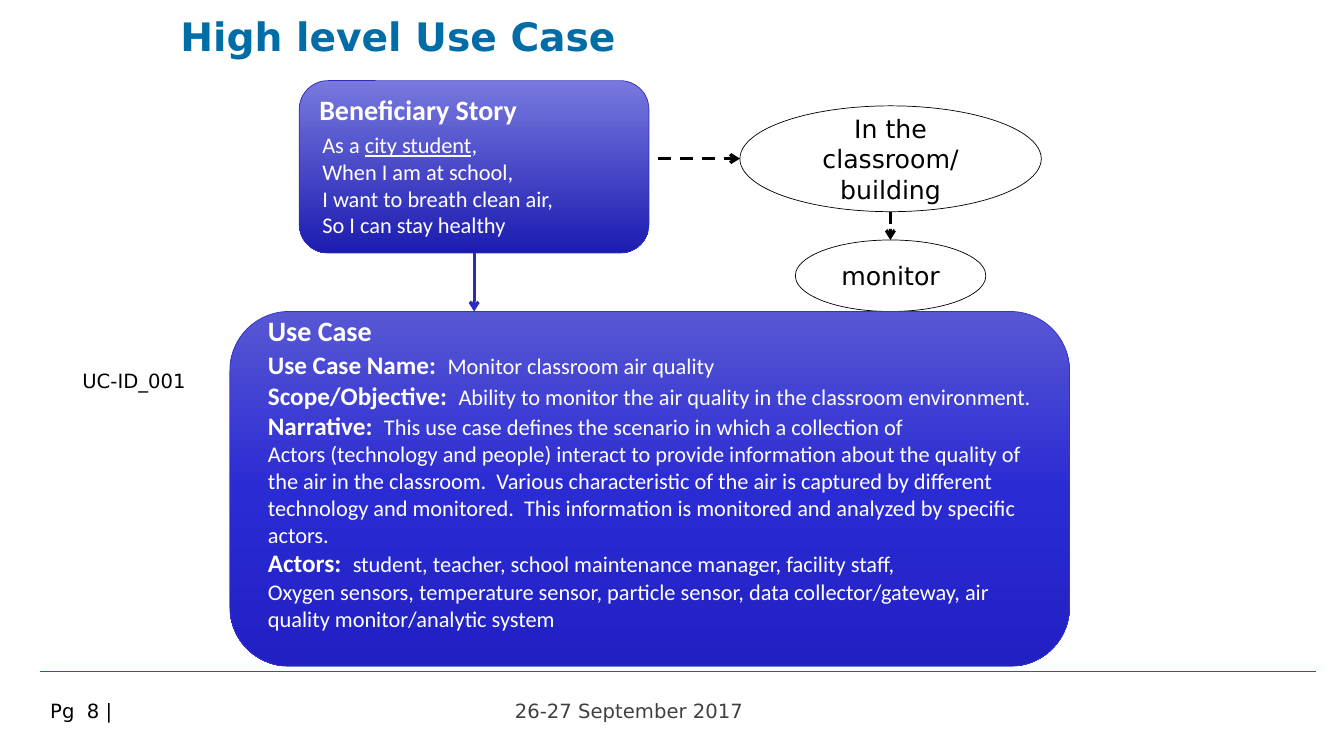
import copy

import pptx
import pptx.dml.color
import pptx.enum.dml
import pptx.enum.shapes
import pptx.enum.text
import pptx.oxml
import pptx.oxml.ns
import pptx.util

Pt = pptx.util.Pt
RGBColor = pptx.dml.color.RGBColor
MSO_SHAPE = pptx.enum.shapes.MSO_SHAPE
PP_ALIGN = pptx.enum.text.PP_ALIGN
MSO_ANCHOR = pptx.enum.text.MSO_ANCHOR
MSO_AUTO_SIZE = pptx.enum.text.MSO_AUTO_SIZE
DASH = pptx.enum.dml.MSO_LINE.DASH

WHITE = RGBColor(0xFF, 0xFF, 0xFF)
BLACK = RGBColor(0, 0, 0)
TEAL = RGBColor(0x00, 0x6D, 0xA7)
GRAY = RGBColor(0x40, 0x40, 0x40)
STORY_EDGE = RGBColor(0x2D, 0x2D, 0xB9)
STORY_COLORS = [RGBColor(0x78, 0x78, 0xDE), RGBColor(0x1C, 0x1C, 0xB1)]
CASE_EDGE = RGBColor(0x33, 0x33, 0xCC)
CASE_COLORS = [
    RGBColor(0x57, 0x57, 0xD3),
    RGBColor(0x2B, 0x2B, 0xD4),
    RGBColor(0x20, 0x20, 0xC3),
]

HEADING = {"name": "Calibri", "size": Pt(20), "bold": True, "color": WHITE}
LABEL = {**HEADING, "size": Pt(18)}
BODY = {**HEADING, "size": Pt(16), "bold": False}
UNDERLINED = {**BODY, "underline": True}
SMALL = {"name": "DejaVu Sans", "size": Pt(14), "color": BLACK}
FOOTER = {**SMALL, "color": GRAY}
BUBBLE = {**SMALL, "size": Pt(18)}
TITLE = {**SMALL, "size": Pt(28), "bold": True, "color": TEAL}

STORY = [
    [("As a ", BODY), ("city student", UNDERLINED), (",", BODY)],
    [("When I am at school,", BODY)],
    [("I want to breath clean air,", BODY)],
    [("So I can stay healthy", BODY)],
]
USE_CASE = [
    [("Use Case Name:  ", LABEL), ("Monitor classroom air quality", BODY)],
    [("Scope/Objective:  ", LABEL),
     ("Ability to monitor the air quality in the classroom environment.", BODY)],
    [("Narrative:  ", LABEL),
     ("This use case defines the scenario in which a collection of", BODY)],
    [("Actors (technology and people) interact to provide information about the "
      "quality of the air in the classroom.  Various characteristic of the air is "
      "captured by different technology and monitored.  This information is "
      "monitored and analyzed by specific actors.", BODY)],
    [("Actors:  ", LABEL),
     ("student, teacher, school maintenance manager, facility staff,", BODY)],
    [("Oxygen sensors, temperature sensor, particle sensor, data "
      "collector/gateway, air quality monitor/analytic system", BODY)],
]


def apply_format(target, values):
    for name, value in values.items():
        if name == "color":
            target.color.rgb = value
        else:
            setattr(target, name, value)


def write_text(shape, paragraphs, paragraph_format):
    frame = shape.text_frame
    for index, runs in enumerate(paragraphs):
        paragraph = frame.add_paragraph() if index else frame.paragraphs[0]
        apply_format(paragraph, paragraph_format)
        for text, font_format in runs:
            run = paragraph.add_run()
            run.text = text
            apply_format(run.font, font_format)


def add_text(slide, box, paragraphs, wrap=True, paragraph_format={}):
    shape = slide.shapes.add_textbox(*map(Pt, box))
    apply_format(shape.text_frame, {
        "word_wrap": wrap, "auto_size": MSO_AUTO_SIZE.SHAPE_TO_FIT_TEXT})
    write_text(shape, paragraphs, paragraph_format)
    return shape


def add_outlined(slide, kind, box, edge):
    shape = slide.shapes.add_shape(kind, *map(Pt, box))
    shape.shadow.inherit = False
    apply_format(shape.line, {"color": edge, "width": Pt(0.5)})
    return shape


def add_panel(slide, box, colors, edge):
    shape = add_outlined(slide, MSO_SHAPE.ROUNDED_RECTANGLE, box, edge)
    shape.fill.gradient()
    shape.fill.gradient_angle = 270
    stop_list = shape._element.spPr.find(".//" + pptx.oxml.ns.qn("a:gsLst"))
    for _ in colors[2:]:
        stop_list.append(copy.deepcopy(stop_list[0]))
    for index, (stop, color) in enumerate(zip(shape.fill.gradient_stops, colors)):
        apply_format(stop, {"color": color, "position": index / (len(colors) - 1)})
    return shape


def add_bubble(slide, box, text):
    shape = add_outlined(slide, MSO_SHAPE.OVAL, box, BLACK)
    shape.fill.background()
    apply_format(shape.text_frame, {
        "word_wrap": True, "vertical_anchor": MSO_ANCHOR.MIDDLE})
    write_text(shape, [[(text, BUBBLE)]], {"alignment": PP_ALIGN.CENTER})


def add_line(slide, ends, line_format, arrow=True):
    connector = slide.shapes.add_connector(
        pptx.enum.shapes.MSO_CONNECTOR.STRAIGHT, *map(Pt, ends))
    apply_format(connector.line, line_format)
    namespace = pptx.oxml.ns.nsdecls("a")
    if arrow:
        connector.line._get_or_add_ln().append(
            pptx.oxml.parse_xml(f'<a:tailEnd {namespace} type="arrow"/>'))
    connector._element.spPr.append(
        pptx.oxml.parse_xml(f"<a:effectLst {namespace}/>"))
    return connector


def main():
    presentation = pptx.Presentation()
    presentation.slide_width = Pt(960)
    presentation.slide_height = Pt(540)
    slide = presentation.slides.add_slide(presentation.slide_layouts[6])

    add_line(slide, (28.8, 479.5, 940.3, 479.5),
             {"color": TEAL, "width": Pt(0.75)}, arrow=False)
    add_text(slide, (360.7, 495.4, 277.9, 24.5), [[("26-27 September 2017", FOOTER)]])

    story = add_panel(slide, (213.8, 57.6, 249.8, 123.1), STORY_COLORS, STORY_EDGE)
    add_text(slide, (221, 62.6, 157, 31.7), [[("Beneficiary Story", HEADING)]], False)
    add_text(slide, (223.2, 90, 223.2, 85), STORY)

    add_bubble(slide, (528.5, 75.6, 215.3, 75.6), "In the classroom/ building")
    add_bubble(slide, (568.1, 171.4, 136.1, 51.1), "monitor")
    dashed = {"color": BLACK, "width": Pt(2.25), "dash_style": DASH.DASH}
    add_line(slide, (636, 151.2, 636, 171.4), dashed)
    add_line(slide, (470.2, 113.3, 528.5, 113.3), dashed)

    add_panel(slide, (164.2, 222.5, 599.8, 253.4), CASE_COLORS, CASE_EDGE)
    add_text(slide, (184.3, 246.2, 559.4, 249.8), USE_CASE)
    add_text(slide, (184.3, 220.3, 89.3, 31.7), [[("Use Case", HEADING)]], False)

    identifier = add_text(slide, (51.8, 259.9, 93.6, 24.5),
                          [[("UC-ID_001", SMALL)]], False)
    identifier.fill.solid()
    identifier.fill.fore_color.rgb = WHITE
    apply_format(identifier.line, {"color": WHITE, "width": Pt(0.5)})

    story_arrow = add_line(slide, (338.7, 180.7, 338.7, 222.5),
                           {"color": STORY_EDGE, "width": Pt(2.25)})
    story_arrow.begin_connect(story, 2)

    title = add_text(slide, (94.3, 7.9, 601.2, 38.9), [[("High level Use Case", TITLE)]],
                     paragraph_format={"line_spacing": 0.94, "space_after": Pt(14.2)})
    title.text_frame.margin_left = Pt(34.6)
    add_text(slide, (28.8, 497.5, 198.7, 28.1), [[("Pg  8 |", SMALL)]],
             paragraph_format={"line_spacing": 0.93})

    presentation.save("out.pptx")


if __name__ == "__main__":
    main()
